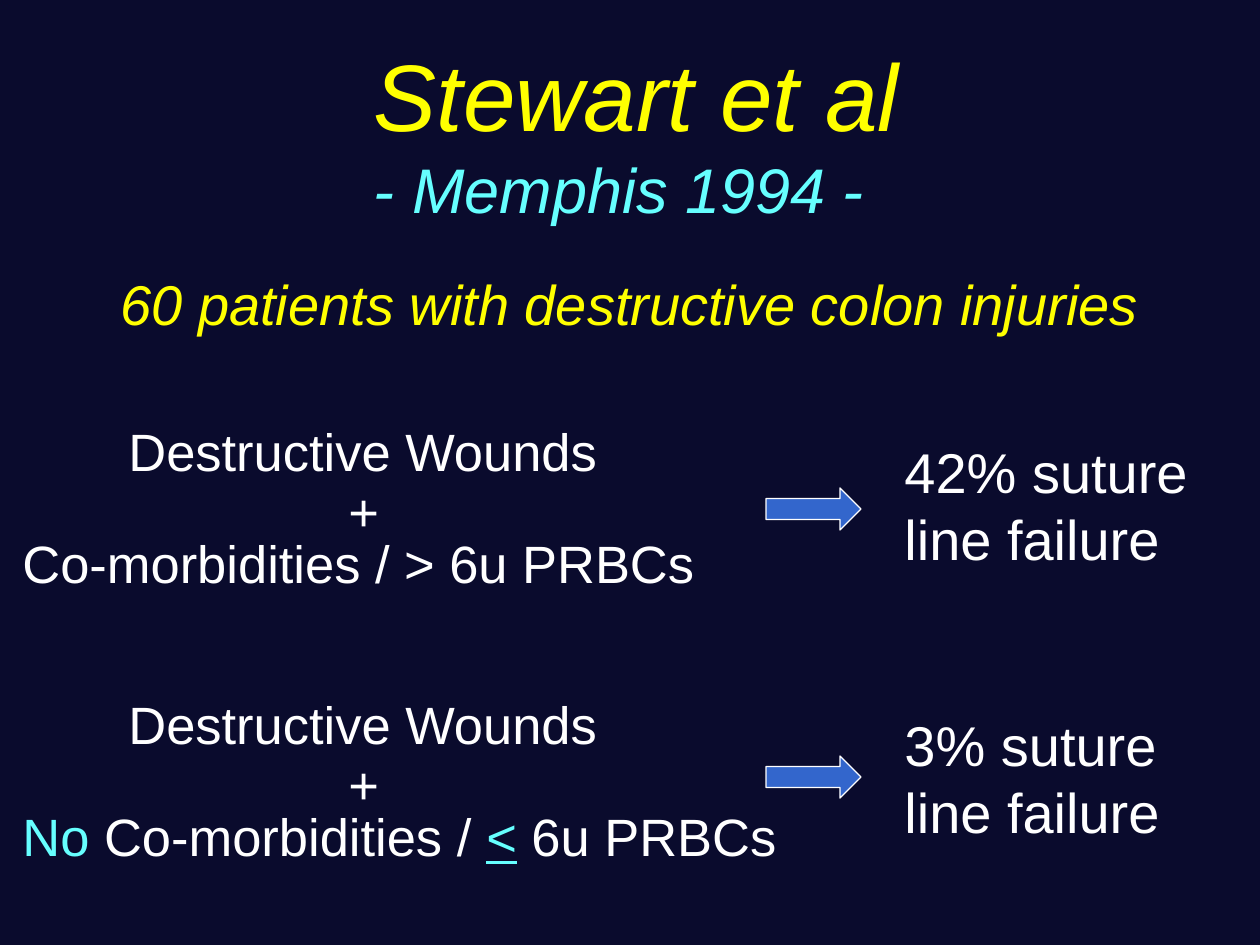
from typing import NamedTuple

from pptx import Presentation
from pptx import util as u
from pptx.dml.color import RGBColor
from pptx.enum import shapes, text

EMU_PER_PX = 914400 / 126
COLORS = {
    "background": "0A0B2D",
    "yellow": "FFFF00",
    "cyan": "66FFFF",
    "white": "FFFFFF",
    "arrow": "3366CC",
}


class Box(NamedTuple):
    left: int
    top: int
    width: int
    height: int


class Piece(NamedTuple):
    text: str
    color: str = "white"
    underline: bool = False


class Finding(NamedTuple):
    """One patient group, its risk factors and its outcome."""
    top: int
    arrow_top: int
    factors: list[Piece]
    factors_width: int
    outcome: str


FINDINGS = [
    Finding(413, 488, [Piece("Co-morbidities / > 6u PRBCs")], 704,
            "42% suture line failure"),
    Finding(686, 756, [Piece("No", "cyan"), Piece(" Co-morbidities / "),
                       Piece("<", "cyan", True), Piece(" 6u PRBCs")], 788,
            "3% suture line failure"),
]


def px(length: int) -> int:
    return round(length * EMU_PER_PX)


def rgb(name: str) -> RGBColor:
    return RGBColor.from_string(COLORS[name])


def place(box: Box) -> list[int]:
    return [px(length) for length in box]


def add_label(slide, box: Box, pieces: list[Piece], size: int, wrap: bool = False):
    """Add a one-paragraph text box and return its paragraph."""
    frame = slide.shapes.add_textbox(*place(box)).text_frame
    frame.word_wrap = wrap
    frame.auto_size = text.MSO_AUTO_SIZE.SHAPE_TO_FIT_TEXT
    paragraph = frame.paragraphs[0]
    paragraph.font.name = "Arial"
    paragraph.font.size = u.Pt(size)
    for piece in pieces:
        run = paragraph.add_run()
        run.text = piece.text
        run.font.color.rgb = rgb(piece.color)
        if piece.underline:
            run.font.underline = True
    return paragraph


def add_arrow(slide, box: Box) -> None:
    arrow = slide.shapes.add_shape(shapes.MSO_SHAPE.RIGHT_ARROW, *place(box))
    arrow.shadow.inherit = False
    arrow.fill.solid()
    arrow.fill.fore_color.rgb = rgb("arrow")
    arrow.line.color.rgb = rgb("white")
    arrow.line.width = u.Pt(0.75)


def add_title(slide) -> None:
    """Both title lines share one left edge."""
    title = slide.shapes.title
    title.left, title.top, title.width, title.height = place(Box(6, 53, 1260, 158))
    frame = title.text_frame
    frame.auto_size = text.MSO_AUTO_SIZE.NONE
    frame.vertical_anchor = text.MSO_ANCHOR.MIDDLE
    frame.margin_left = px(368)
    paragraph = frame.paragraphs[0]
    paragraph.alignment = text.PP_ALIGN.LEFT
    paragraph.font.name = "Arial"
    paragraph.font.italic = True
    lines = [("Stewart et al", 54, "yellow"), ("- Memphis 1994 -", 36, "cyan")]
    for index, (line, size, color) in enumerate(lines):
        if index:
            paragraph.add_line_break()
        run = paragraph.add_run()
        run.text = line
        run.font.size = u.Pt(size)
        run.font.color.rgb = rgb(color)


def add_finding(slide, finding: Finding) -> None:
    top = finding.top
    add_label(slide, Box(116, top, 499, 77), [Piece("Destructive Wounds")], 30)
    add_label(slide, Box(336, top + 60, 57, 77), [Piece("+")], 30)
    add_label(slide, Box(10, top + 112, finding.factors_width, 77),
              finding.factors, 30)
    add_label(slide, Box(892, top + 18, 357, 149), [Piece(finding.outcome)], 32,
              wrap=True)
    add_arrow(slide, Box(766, finding.arrow_top, 95, 42))


def main() -> None:
    presentation = Presentation()
    presentation.slide_width, presentation.slide_height = px(1260), px(945)
    slide = presentation.slides.add_slide(presentation.slide_layouts[5])
    slide.background.fill.solid()
    slide.background.fill.fore_color.rgb = rgb("background")

    # Heading
    add_title(slide)
    summary = add_label(slide, Box(0, 271, 1260, 76),
                        [Piece("60 patients with destructive colon injuries", "yellow")],
                        32, wrap=True)
    summary.font.italic = True
    summary.alignment = text.PP_ALIGN.CENTER
    summary.line_spacing = 0.9
    summary.space_after = u.Pt(12)

    # Patient groups and outcomes
    for finding in FINDINGS:
        add_finding(slide, finding)

    presentation.save("out.pptx")


if __name__ == "__main__":
    main()
